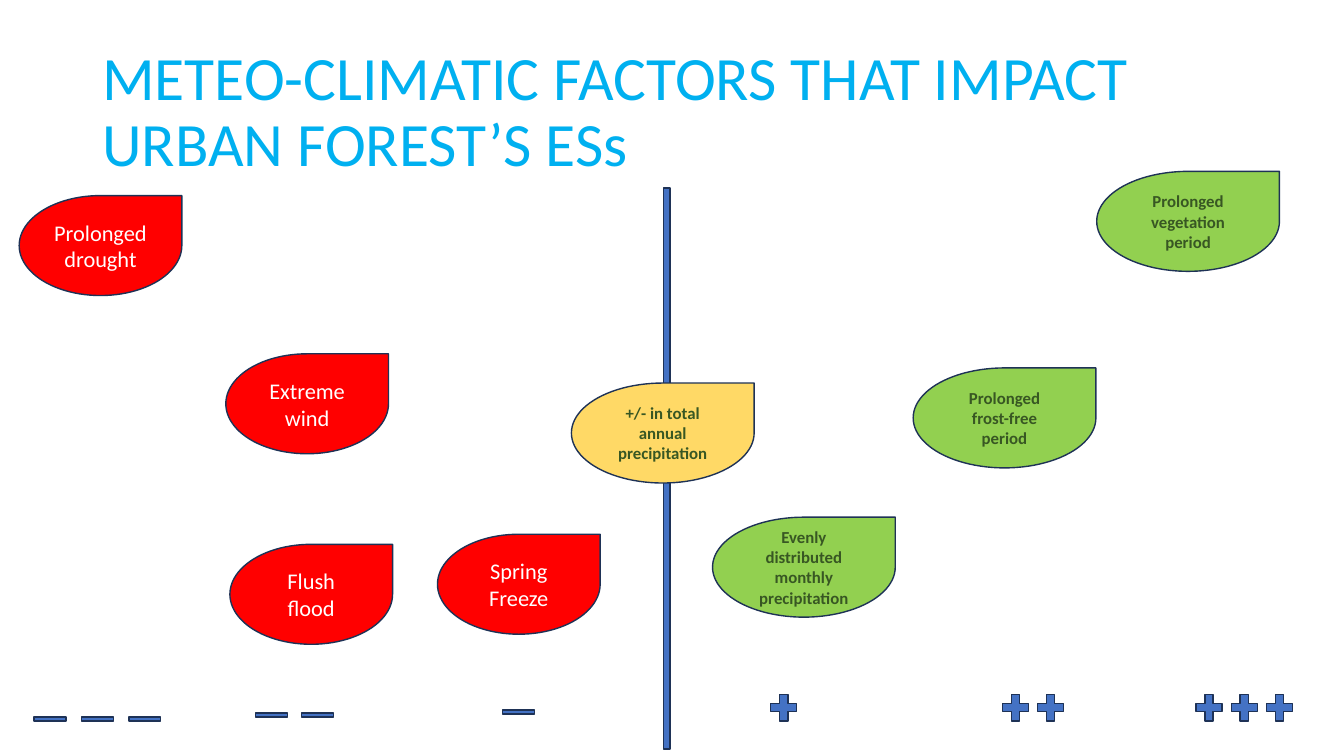
from dataclasses import dataclass

from pptx import Presentation
from pptx.dml.color import RGBColor
from pptx.enum.shapes import MSO_SHAPE
from pptx.enum.text import MSO_ANCHOR, PP_ALIGN
from pptx.shapes.autoshape import Shape
from pptx.slide import Slide
from pptx.util import Pt

BAR = MSO_SHAPE.RECTANGLE
PLUS = MSO_SHAPE.MATH_PLUS
MINUS = MSO_SHAPE.MATH_MINUS
TEARDROP = MSO_SHAPE.TEAR
MIDDLE = MSO_ANCHOR.MIDDLE
LEFT = PP_ALIGN.LEFT
CENTER = PP_ALIGN.CENTER


@dataclass(frozen=True)
class Theme:
    font: str = "Calibri"
    title: str = "00B0F0"
    mark: str = "4472C4"
    outline: str = "1E3256"
    harmful: str = "FF0000"
    helpful: str = "92D050"
    mixed: str = "FFD966"
    light_text: str = "FFFFFF"
    dark_text: str = "385723"
    title_size: float = 44
    harmful_size: float = 16
    other_size: float = 12


THEME = Theme()


@dataclass(frozen=True)
class Factor:
    text: str
    left: float
    top: float
    fill: str


@dataclass(frozen=True)
class MarkRow:
    """A row of equal plus or minus signs that rates the factors above it."""
    kind: MSO_SHAPE
    count: int
    left: float
    top: float
    width: float
    height: float
    step: float


FACTORS = [
    Factor("Extreme wind", 161.3, 252.7, THEME.harmful),
    Factor("Spring Freeze", 312.5, 381.6, THEME.harmful),
    Factor("Prolonged frost-free period", 652.3, 262.8, THEME.helpful),
    Factor("Evenly distributed monthly precipitation", 509, 369.4, THEME.helpful),
    Factor("+/- in total annual precipitation", 408.2, 273.6, THEME.mixed),
    Factor("Prolonged vegetation period", 783.4, 122.4, THEME.helpful),
    Factor("Flush flood", 164.2, 388.8, THEME.harmful),
    Factor("Prolonged drought", 13.7, 139.7, THEME.harmful),
]

MARK_ROWS = [
    MarkRow(MINUS, 3, 20.2, 507.6, 31, 12.2, 33.9),
    MarkRow(MINUS, 2, 178.6, 504.7, 31, 12.2, 32.6),
    MarkRow(MINUS, 1, 355, 502.4, 31, 12.2, 0),
    MarkRow(PLUS, 1, 547.2, 492.5, 25.2, 25.9, 0),
    MarkRow(PLUS, 2, 712.8, 492.5, 25.2, 25.9, 25),
    MarkRow(PLUS, 3, 851, 492.5, 25.2, 25.9, 25.2),
]


def write_text(shape: Shape, text: str, *, size: float, color: str,
               bold: bool = False, align: PP_ALIGN = CENTER,
               line_spacing: float = 1.0) -> None:
    frame = shape.text_frame
    frame.word_wrap = True
    frame.vertical_anchor = MIDDLE
    paragraph = frame.paragraphs[0]
    paragraph.text = text
    paragraph.alignment = align
    paragraph.line_spacing = line_spacing
    paragraph.font.name = THEME.font
    paragraph.font.size = Pt(size)
    paragraph.font.bold = bold
    paragraph.font.color.rgb = RGBColor.from_string(color)


def add_outlined_shape(slide: Slide, kind: MSO_SHAPE, left: float, top: float,
                       width: float, height: float, fill: str) -> Shape:
    shape = slide.shapes.add_shape(kind, Pt(left), Pt(top), Pt(width), Pt(height))
    shape.shadow.inherit = False
    shape.fill.solid()
    shape.fill.fore_color.rgb = RGBColor.from_string(fill)
    shape.line.color.rgb = RGBColor.from_string(THEME.outline)
    shape.line.width = Pt(1)
    return shape


def add_title(slide: Slide, text: str) -> None:
    title = slide.shapes.add_textbox(Pt(66), Pt(28.75), Pt(828), Pt(104.4))
    write_text(title, text, size=THEME.title_size, color=THEME.title,
               align=LEFT, line_spacing=0.9)


def add_mark_row(slide: Slide, row: MarkRow) -> None:
    for index in range(row.count):
        add_outlined_shape(slide, row.kind, row.left + index * row.step, row.top,
                           row.width, row.height, THEME.mark)


def add_factor(slide: Slide, factor: Factor) -> None:
    harmful = factor.fill == THEME.harmful
    shape = add_outlined_shape(slide, TEARDROP, factor.left, factor.top,
                               116.2 if harmful else 130.5, 71.4, factor.fill)
    write_text(shape, factor.text,
               size=THEME.harmful_size if harmful else THEME.other_size,
               color=THEME.light_text if harmful else THEME.dark_text,
               bold=not harmful)


def main() -> None:
    presentation = Presentation()
    presentation.slide_width = Pt(960)
    presentation.slide_height = Pt(540)
    slide = presentation.slides.add_slide(presentation.slide_layouts[6])
    add_title(slide, "METEO-CLIMATIC FACTORS THAT IMPACT URBAN FOREST’S ESs")
    add_outlined_shape(slide, BAR, 473.9, 134.2, 4.8, 401, THEME.mark)
    for row in MARK_ROWS:
        add_mark_row(slide, row)
    for factor in FACTORS:
        add_factor(slide, factor)
    presentation.save("out.pptx")


if __name__ == "__main__":
    main()
